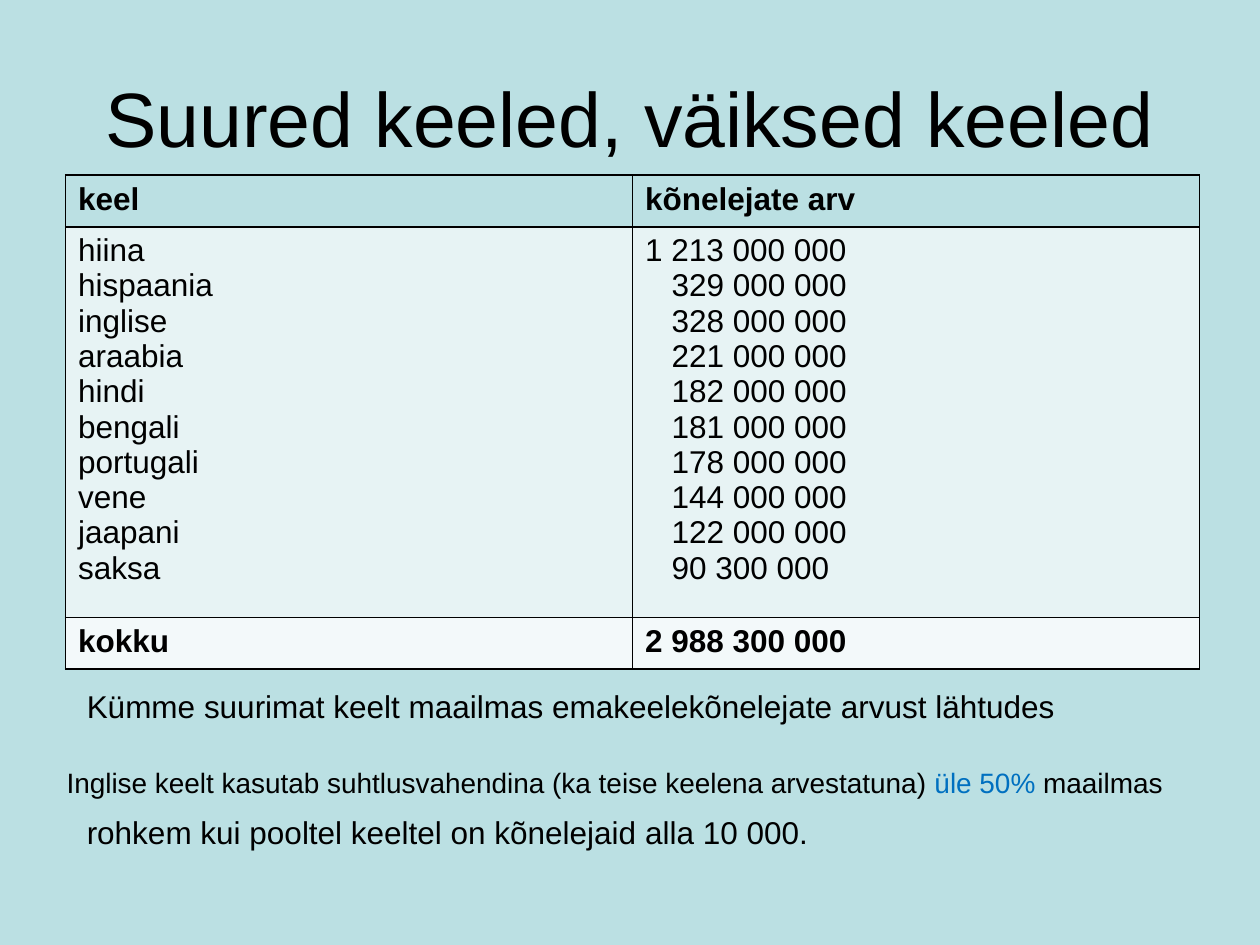
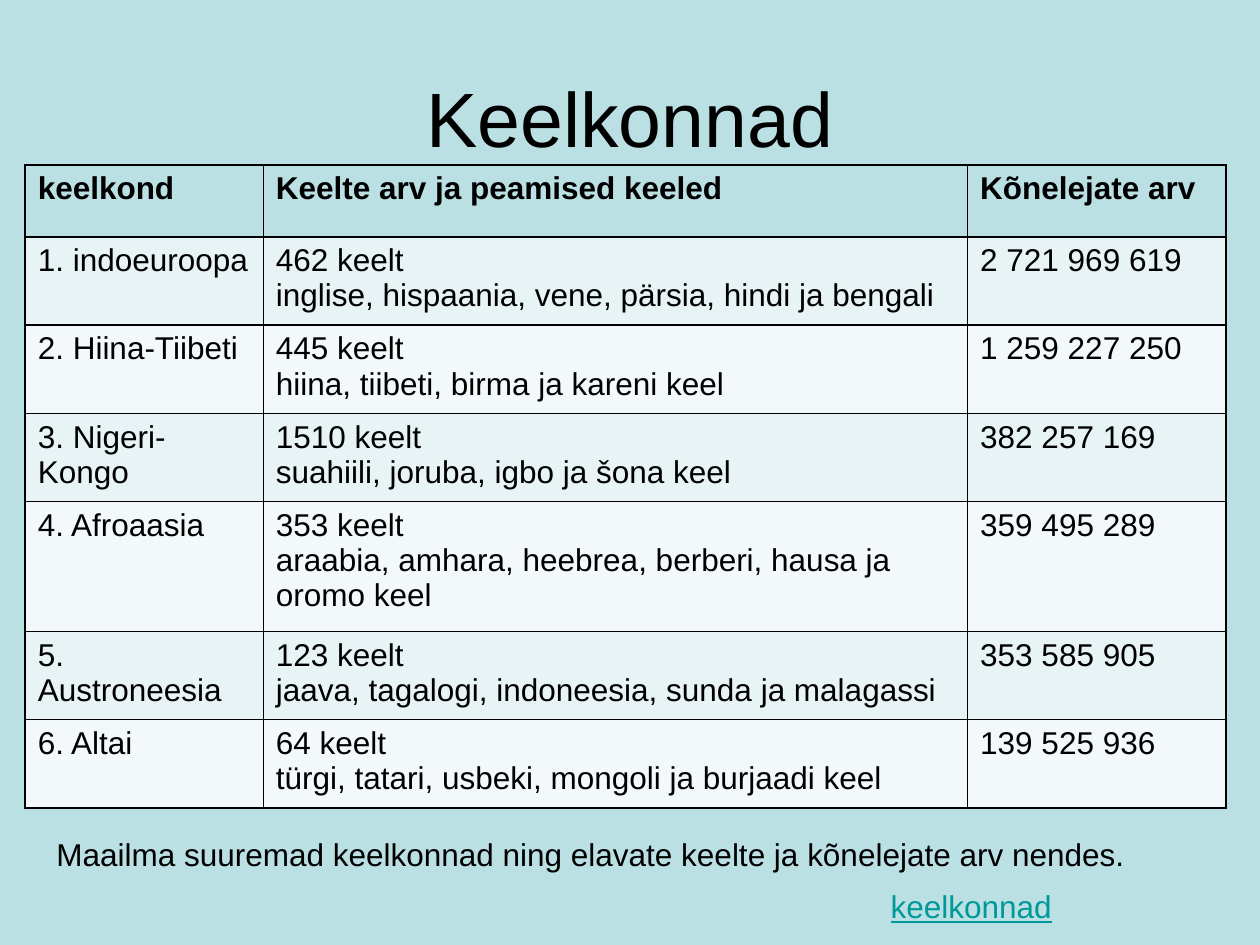
from lxml import etree
from pptx import Presentation
from pptx.dml.color import RGBColor
from pptx.enum.text import MSO_ANCHOR as Anchor, PP_ALIGN as Align
from pptx.oxml.ns import qn
from pptx.util import Inches, Pt

FONT = "Arial"
BLACK, BLUE, TEAL = "000000", "0070C0", "009999"
BACKGROUND = "BBE0E3"
BANDS = ("E7F3F4", "F3F9FA")
NUMBER_INDENT = 0.21

LANGUAGES = [
    ("hiina", "1 213 000 000"),
    ("hispaania", "329 000 000"),
    ("inglise", "328 000 000"),
    ("araabia", "221 000 000"),
    ("hindi", "182 000 000"),
    ("bengali", "181 000 000"),
    ("portugali", "178 000 000"),
    ("vene", "144 000 000"),
    ("jaapani", "122 000 000"),
    ("saksa", "90 300 000"),
]

FAMILIES = [
    ("1. indoeuroopa", "462 keelt",
     "inglise, hispaania, vene, pärsia, hindi ja bengali", "2 721 969 619"),
    ("2. Hiina-Tiibeti", "445 keelt",
     "hiina, tiibeti, birma ja kareni keel", "1 259 227 250"),
    ("3. Nigeri-Kongo", "1510 keelt",
     "suahiili, joruba, igbo ja šona keel", "382 257 169"),
    ("4. Afroaasia", "353 keelt",
     "araabia, amhara, heebrea, berberi, hausa ja oromo keel", "359 495 289"),
    ("5. Austroneesia", "123 keelt",
     "jaava, tagalogi, indoneesia, sunda ja malagassi", "353 585 905"),
    ("6. Altai", "64 keelt",
     "türgi, tatari, usbeki, mongoli ja burjaadi keel", "139 525 936"),
]


def rgb(color):
    return RGBColor.from_string(color)


def write(frame, lines, size=18, color=BLACK, bold=False, underline=False,
          align=Align.LEFT):
    """Each line is a string or a list of (text, colour) runs."""
    for i, line in enumerate(lines):
        paragraph = frame.paragraphs[0] if i == 0 else frame.add_paragraph()
        paragraph.alignment = align
        for text, run_color in [(line, color)] if isinstance(line, str) else line:
            run = paragraph.add_run()
            run.text = text
            run.font.name = FONT
            run.font.size = Pt(size)
            run.font.bold = bold
            run.font.underline = underline
            run.font.color.rgb = rgb(run_color)


def add_text(slide, box, line, anchor=Anchor.TOP, **style):
    frame = slide.shapes.add_textbox(*map(Inches, box)).text_frame
    frame.word_wrap = True
    frame.vertical_anchor = anchor
    write(frame, [line], **style)


def add_titled_slide(deck, title):
    slide = deck.slides.add_slide(deck.slide_layouts[6])
    slide.background.fill.solid()
    slide.background.fill.fore_color.rgb = rgb(BACKGROUND)
    add_text(slide, (0.5, 0.3, 9, 1.25), title, anchor=Anchor.MIDDLE,
             size=44, align=Align.CENTER)
    return slide


def outline(cell, color=BLACK, width=1):
    properties = cell._tc.get_or_add_tcPr()
    for side in ("lnL", "lnR", "lnT", "lnB"):
        line = etree.SubElement(properties, qn(f"a:{side}"), w=str(Pt(width)))
        fill = etree.SubElement(line, qn("a:solidFill"))
        etree.SubElement(fill, qn("a:srgbClr"), val=color)


def add_grid(slide, left, top, widths, heights, rows, bold_rows=(0,)):
    """Each cell is a list of lines; body rows alternate the band colours."""
    table = slide.shapes.add_table(
        len(rows), len(widths), Inches(left), Inches(top),
        Inches(sum(widths)), Inches(sum(heights))).table
    table.first_row = table.horz_banding = False
    for column, width in zip(table.columns, widths):
        column.width = Inches(width)
    for r, (row, height) in enumerate(zip(rows, heights)):
        table.rows[r].height = Inches(height)
        for c, lines in enumerate(row):
            cell = table.cell(r, c)
            outline(cell)
            cell.fill.solid()
            cell.fill.fore_color.rgb = rgb(BANDS[(r - 1) % 2] if r else BACKGROUND)
            write(cell.text_frame, lines, bold=r in bold_rows)
    return table


def build_languages(deck):
    slide = add_titled_slide(deck, "Suured keeled, väiksed keeled")
    names, speakers = zip(*LANGUAGES)
    rows = [
        (["keel"], ["kõnelejate arv"]),
        (names, speakers),
        (["kokku"], ["2 988 300 000"]),
    ]
    table = add_grid(slide, 0.52, 1.39, (4.5, 4.5), (0.41, 2.9, 0.41), rows,
                     bold_rows=(0, 2))
    for paragraph in table.cell(1, 1).text_frame.paragraphs[1:]:
        paragraph._p.get_or_add_pPr().set("marL", str(Inches(NUMBER_INDENT)))

    add_text(slide, (0.59, 5.4, 8.11, 0.4),
             "Kümme suurimat keelt maailmas emakeelekõnelejate arvust lähtudes")
    add_text(slide, (0.43, 6.03, 9.21, 0.37), [
        ("Inglise keelt kasutab suhtlusvahendina (ka teise keelena arvestatuna) ", BLACK),
        ("üle 50% ", BLUE),
        ("maailmas", BLACK),
    ], size=16)
    add_text(slide, (0.59, 6.4, 8.11, 0.4),
             "rohkem kui pooltel keeltel on kõnelejaid alla 10 000.")


def build_families(deck):
    slide = add_titled_slide(deck, "Keelkonnad")
    rows = [(["keelkond"], ["Keelte arv ja peamised keeled"], ["Kõnelejate arv"])]
    rows += [([family], [count, main_languages], [speakers])
             for family, count, main_languages, speakers in FAMILIES]
    add_grid(slide, 0.2, 1.31, (1.89, 5.59, 2.05),
             (0.57, 0.69, 0.66, 0.66, 1.03, 0.66, 0.66), rows)

    add_text(slide, (0.35, 6.58, 8.74, 0.4),
             "Maailma suuremad keelkonnad ning elavate keelte ja kõnelejate arv nendes.")
    add_text(slide, (6.97, 6.99, 2.13, 0.4), "keelkonnad", color=TEAL, underline=True)


def main():
    deck = Presentation()
    deck.slide_width, deck.slide_height = Inches(10), Inches(7.5)
    build_languages(deck)
    build_families(deck)
    deck.save("out.pptx")


if __name__ == "__main__":
    main()
